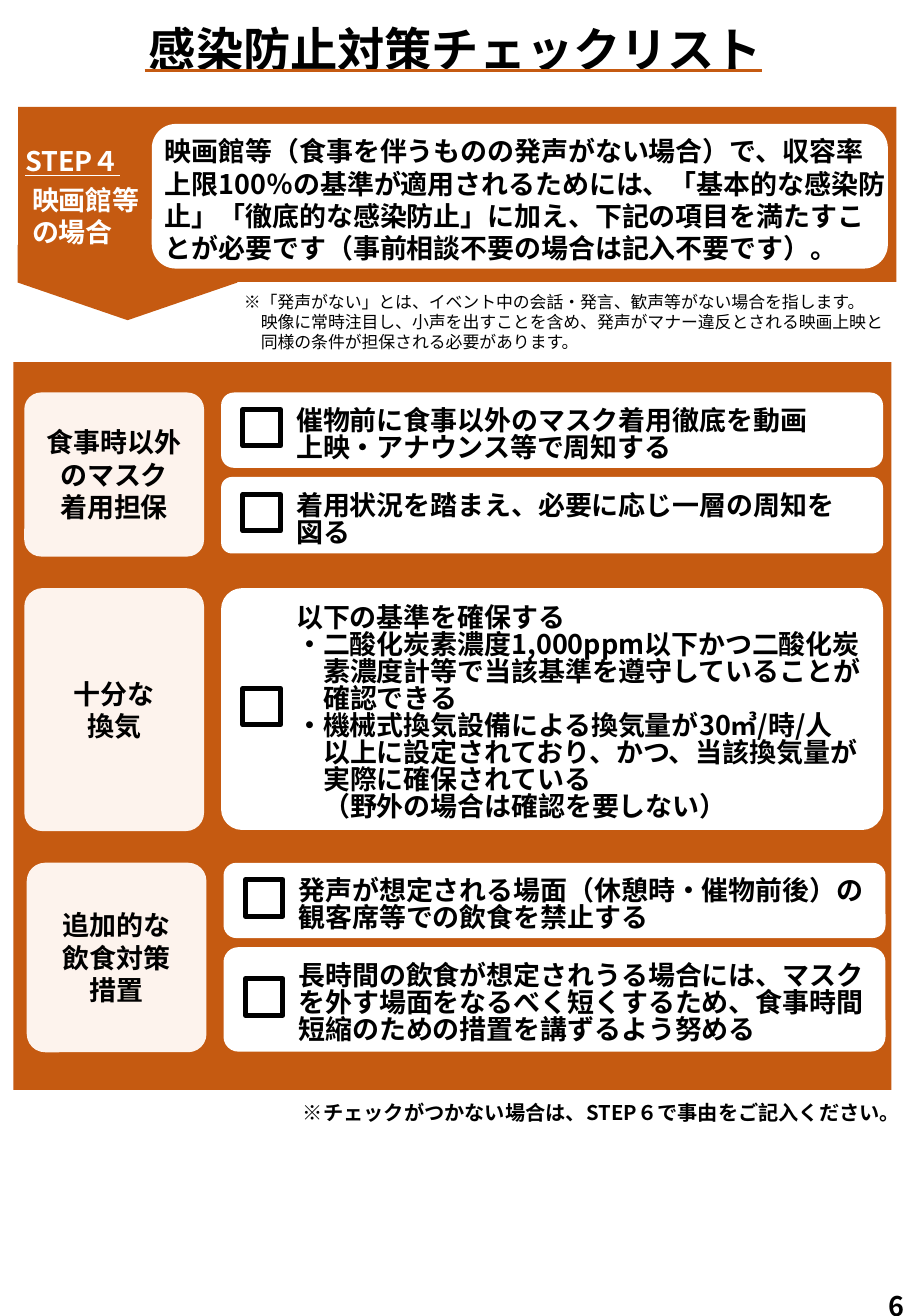
from lxml.etree import SubElement
from pptx import Presentation
from pptx.dml.color import RGBColor
from pptx.enum.shapes import MSO_CONNECTOR as Link, MSO_SHAPE as Form
from pptx.enum.text import MSO_ANCHOR as Anchor, MSO_AUTO_SIZE as Fit, PP_ALIGN as Align
from pptx.oxml.ns import qn
from pptx.util import Inches, Pt

FONT = "Noto Sans CJK JP"
RUST, CREAM, WHITE, BLACK = "C55A11", "FDF3ED", "FFFFFF", "000000"
COLS, ROWS = 750, 1083
TITLE = ["感染防止対策チェックリスト"]
STEP = ["STEP４", "映画館等", "の場合"]
LEAD = ["映画館等（食事を伴うものの発声がない場合）で、収容率上限100％の基準が適用されるためには、"
        "「基本的な感染防止」「徹底的な感染防止」に加え、下記の項目を満たすことが必要です"
        "（事前相談不要の場合は記入不要です）。"]
NOTE = ["※「発声がない」とは、イベント中の会話・発言、歓声等がない場合を指します。",
        "映像に常時注目し、小声を出すことを含め、発声がマナー違反とされる映画上映と",
        "同様の条件が担保される必要があります。"]
FOOT = ["※チェックがつかない場合は、STEP６で事由をご記入ください。"]
PAGE = ["6"]
# left, top, height, label, cards of (height, corner, lines, indented lines)
PARTS = [
    (20, 323, 135, ["食事時以外のマスク", "着用担保"], [
        (62, .171, ["催物前に食事以外のマスク着用徹底を動画", "上映・アナウンス等で周知する"], ()),
        (63, .142, ["着用状況を踏まえ、必要に応じ一層の周知を", "図る"], ())]),
    (20, 484, 200, ["十分な", "換気"], [
        (199, .087, ["以下の基準を確保する",
                     "・二酸化炭素濃度1,000ppm以下かつ二酸化炭",
                     "素濃度計等で当該基準を遵守していることが",
                     "確認できる",
                     "・機械式換気設備による換気量が30㎥/時/人",
                     "以上に設定されており、かつ、当該換気量が",
                     "実際に確保されている",
                     "（野外の場合は確認を要しない）"], (2, 3, 5, 6, 7))]),
    (22, 710, 156, ["追加的な", "飲食対策", "措置"], [
        (62, .171, ["発声が想定される場面（休憩時・催物前後）の", "観客席等での飲食を禁止する"], ()),
        (86, .142, ["長時間の飲食が想定されうる場合には、マスク",
                    "を外す場面をなるべく短くするため、食事時間",
                    "短縮のための措置を講ずるよう努める"], ())]),
]
LABEL, CARD, GAP, BOX = 148, 545, 7.5, 31

deck = Presentation()
deck.slide_width, deck.slide_height = Inches(7.5), Inches(10.83)
slide = deck.slides.add_slide(deck.slide_layouts[6])
shapes = slide.shapes


def grid(x, y, *size):
    """Turn grid columns and rows into slide lengths."""
    wide, high = deck.slide_width / COLS, deck.slide_height / ROWS
    return [round(n * (high if i % 2 else wide)) for i, n in enumerate((x, y, *size))]


def hue(code):
    """Read a hex colour."""
    return RGBColor.from_string(code)


def form(kind, cells, fill=None, edge=None, curve=None):
    """Add a flat preset shape."""
    item = shapes.add_shape(kind, *grid(*cells))
    item.shadow.inherit = False
    if fill:
        item.fill.solid()
        item.fill.fore_color.rgb = hue(fill)
    else:
        item.fill.background()
    if edge:
        item.line.color.rgb, item.line.width = hue(edge), Pt(3)
    else:
        item.line.fill.background()
    if curve is not None:
        item.adjustments[0] = curve
    return item


def write(frame, lines, size=16, ink=BLACK, bold=True, align=Align.LEFT, lead=None, dent=(), step=0):
    """Fill a text frame line by line and return its paragraphs."""
    frame.word_wrap = True
    paras = []
    for i, line in enumerate(lines):
        para = frame.add_paragraph() if i else frame.paragraphs[0]
        para.alignment = align
        if lead:
            para.line_spacing = Pt(lead)
        if i in dent:
            para._p.get_or_add_pPr().set("marL", str(Pt(step or size)))
        run = para.add_run()
        run.text = line
        font = run.font
        font.name, font.size, font.bold = FONT, Pt(size), bold
        font.color.rgb = hue(ink)
        SubElement(run._r.get_or_add_rPr(), qn("a:ea")).set("typeface", FONT)
        paras.append(para)
    return paras


def note(cells, lines, **style):
    """Add a text box that grows with its text."""
    frame = shapes.add_textbox(*grid(*cells)).text_frame
    frame.auto_size = Fit.SHAPE_TO_FIT_TEXT
    return write(frame, lines, **style)


def card(x, y, high, curve, lines, dent):
    """Add a white card with its check box and text."""
    form(Form.ROUNDED_RECTANGLE, (x, y, CARD, high), WHITE, curve=curve)
    mid = y + high / 2
    form(Form.RECTANGLE, (x + 18, mid - 17, BOX, 30), edge=BLACK)
    tall = 10 + 22.5 * len(lines)
    note((x + 52, mid + 5 - tall / 2, 514, tall), lines, lead=16, dent=dent)


def part(x, y, high, label, cards):
    """Add a label and the cards stacked beside it."""
    tag = form(Form.ROUNDED_RECTANGLE, (x, y, LABEL, high), CREAM, curve=.102)
    frame = tag.text_frame
    frame.vertical_anchor = Anchor.MIDDLE
    frame.margin_left = frame.margin_right = Inches(.07)
    frame.margin_top = frame.margin_bottom = Inches(.04)
    write(frame, label, align=Align.CENTER)
    for tall, curve, lines, dent in cards:
        card(x + LABEL + 14, y, tall, curve, lines, dent)
        y += tall + GAP


def main():
    """Build the checklist slide."""
    note((48, 12, 654, 57), TITLE, size=28, align=Align.CENTER)
    rule = shapes.add_connector(Link.STRAIGHT, *grid(119, 58, 627, 58))
    rule.line.color.rgb, rule.line.width = hue(RUST), Pt(2.25)
    SubElement(rule._element.spPr, qn("a:effectLst"))

    form(Form.PENTAGON, (74, 142, 62, 181), RUST).rotation = 90
    form(Form.RECTANGLE, (15, 88, 723, 144), RUST)
    form(Form.ROUNDED_RECTANGLE, (125, 102, 606, 119), WHITE)
    step = note((11, 114, 119, 96), STEP, ink=WHITE, dent=(1, 2), step=4)
    step[0].runs[0].font.underline = True
    step[1].space_before = Pt(4)
    note((126, 106, 614, 118), LEAD)

    form(Form.RECTANGLE, (11, 298, 723, 599), RUST)
    for row in PARTS:
        part(*row)
    note((191, 235, 553, 61), NOTE, size=10, bold=False, dent=(1, 2))
    note((212, 898, 539, 33), FOOT, size=12, align=Align.RIGHT, lead=16)
    note((722, 1056, 59, 37), PAGE)
    deck.save("out.pptx")


if __name__ == "__main__":
    main()
